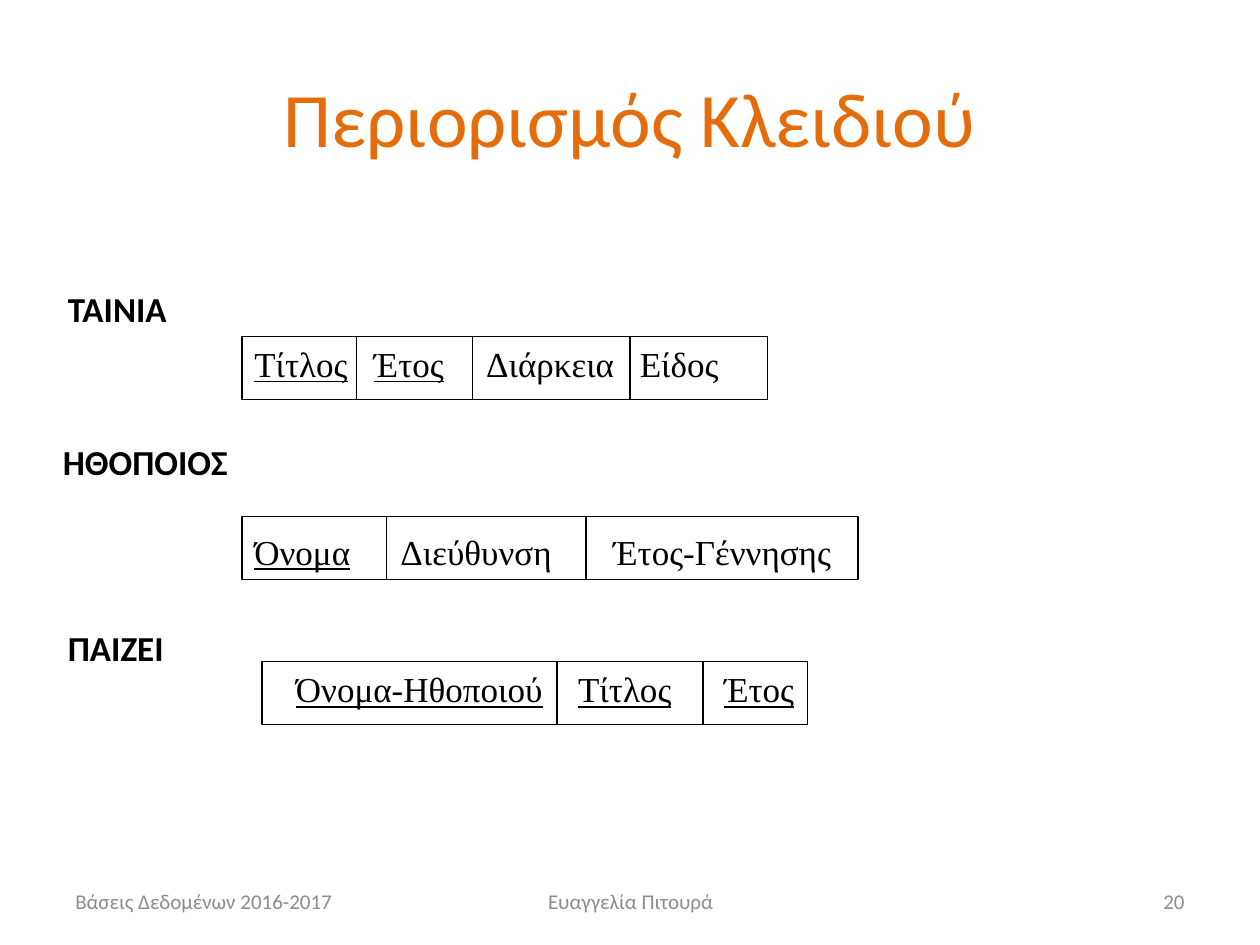
from dataclasses import dataclass

from lxml import etree
from pptx import Presentation
from pptx.dml.color import RGBColor
from pptx.enum.shapes import MSO_CONNECTOR, MSO_SHAPE
from pptx.enum.text import MSO_ANCHOR, MSO_AUTO_SIZE, PP_ALIGN
from pptx.oxml.ns import qn
from pptx.util import Inches, Pt

LEFT, CENTER, RIGHT = PP_ALIGN.LEFT, PP_ALIGN.CENTER, PP_ALIGN.RIGHT
TOP, MIDDLE = MSO_ANCHOR.TOP, MSO_ANCHOR.MIDDLE
GROW = MSO_AUTO_SIZE.SHAPE_TO_FIT_TEXT
RECT, STRAIGHT = MSO_SHAPE.RECTANGLE, MSO_CONNECTOR.STRAIGHT


@dataclass(frozen=True)
class Theme:
    title: RGBColor = RGBColor(0xE4, 0x6C, 0x0A)
    ink: RGBColor = RGBColor(0, 0, 0)
    footer: RGBColor = RGBColor(0x8C, 0x8C, 0x8C)
    sans: str = "Calibri"
    serif: str = "Times New Roman"
    title_size: Pt = Pt(44)
    body_size: Pt = Pt(20)
    footer_size: Pt = Pt(12)
    rule: Pt = Pt(0.75)


T = Theme()
ROW_H = 0.5
INSET = 0.1


def add_run(p, text, font, size, color, bold=False, underline=False):
    r = p.add_run()
    r.text = text
    r.font.name, r.font.size, r.font.color.rgb = font, size, color
    r.font.bold, r.font.underline = bold, underline


def add_text(shapes, x, y, w, h, anchor=TOP, align=LEFT):
    """Add an empty wrapping text box and return its first paragraph."""
    tf = shapes.add_textbox(Inches(x), Inches(y), Inches(w), Inches(h)).text_frame
    tf.word_wrap = True
    tf.vertical_anchor = anchor
    if anchor == TOP:
        tf.auto_size = GROW
    p = tf.paragraphs[0]
    p.alignment = align
    return p


prs = Presentation()
prs.slide_width, prs.slide_height = Inches(10), Inches(7.5)
s = prs.slides.add_slide(prs.slide_layouts[5])

title = s.shapes.title
title.left, title.top = Inches(0.5), Inches(0.3)
title.width, title.height = Inches(9), Inches(1.25)
title.text_frame.vertical_anchor = MIDDLE
p = title.text_frame.paragraphs[0]
p.alignment = CENTER
add_run(p, "Περιορισμός Κλειδιού", T.sans, T.title_size, T.title)

# Relation names: text, left, top, width
for name, x, y, w in [
    ("ΤΑΙΝΙΑ", 0.44, 2.23, 2.75),
    ("ΗΘΟΠΟΙΟΣ", 0.4, 3.45, 3.28),
    ("ΠΑΙΖΕΙ", 0.44, 4.92, 2.39),
]:
    p = add_text(s.shapes, x, y, w, 0.43)
    add_run(p, name, T.sans, T.body_size, T.ink, bold=True)

# Schemas: column edges, row top, text box (left, top, width),
# attributes as (name, left of the name, belongs to the key)
schemas = [
    ([1.92, 2.83, 3.75, 5, 6.09], 2.67, (1.92, 2.67, 7.67),
     [("Τίτλος", 2.02, True), ("Έτος", 2.97, True),
      ("Διάρκεια", 3.86, False), ("Είδος", 5.08, False)]),
    ([1.92, 3.07, 4.65, 6.81], 4.1, (1.92, 4.16, 5.72),
     [("Όνομα", 2.02, True), ("Διεύθυνση", 3.18, False),
      ("Έτος-Γέννησης", 4.87, False)]),
    ([2.08, 4.42, 5.58, 6.41], 5.25, (2.25, 5.25, 5.67),
     [("Όνομα-Ηθοποιού", 2.35, True), ("Τίτλος", 4.59, True),
      ("Έτος", 5.75, True)]),
]
for edges, top, (text_x, text_y, text_w), attributes in schemas:
    row = s.shapes.add_group_shape().shapes

    p = add_text(row, text_x, text_y, text_w, 0.43)
    tabs = etree.SubElement(p._p.get_or_add_pPr(), qn("a:tabLst"))
    for i, (name, x, is_key) in enumerate(attributes):
        if i:
            stop = Inches(x - text_x - INSET)
            etree.SubElement(tabs, qn("a:tab"), pos=str(stop), algn="l")
            add_run(p, "\t", T.serif, T.body_size, T.ink)
        add_run(p, name, T.serif, T.body_size, T.ink, underline=is_key)

    box = row.add_shape(RECT, Inches(edges[0]), Inches(top),
                        Inches(edges[-1] - edges[0]), Inches(ROW_H))
    box.shadow.inherit = False
    box.fill.background()
    box.line.color.rgb, box.line.width = T.ink, T.rule

    for x in edges[1:-1]:
        divider = row.add_connector(STRAIGHT, Inches(x), Inches(top),
                                    Inches(x), Inches(top + ROW_H))
        divider.line.color.rgb, divider.line.width = T.ink, T.rule
        etree.SubElement(divider._element.spPr, qn("a:effectLst"))

# Footer: text, left, width, alignment
for text, x, w, align in [
    ("Βάσεις Δεδομένων 2016-2017", 0.5, 2.33, LEFT),
    ("Ευαγγελία Πιτουρά", 3.42, 3.17, CENTER),
    ("20", 7.17, 2.33, RIGHT),
]:
    p = add_text(s.shapes, x, 6.95, w, 0.4, MIDDLE, align)
    add_run(p, text, T.sans, T.footer_size, T.footer)

prs.save("out.pptx")
